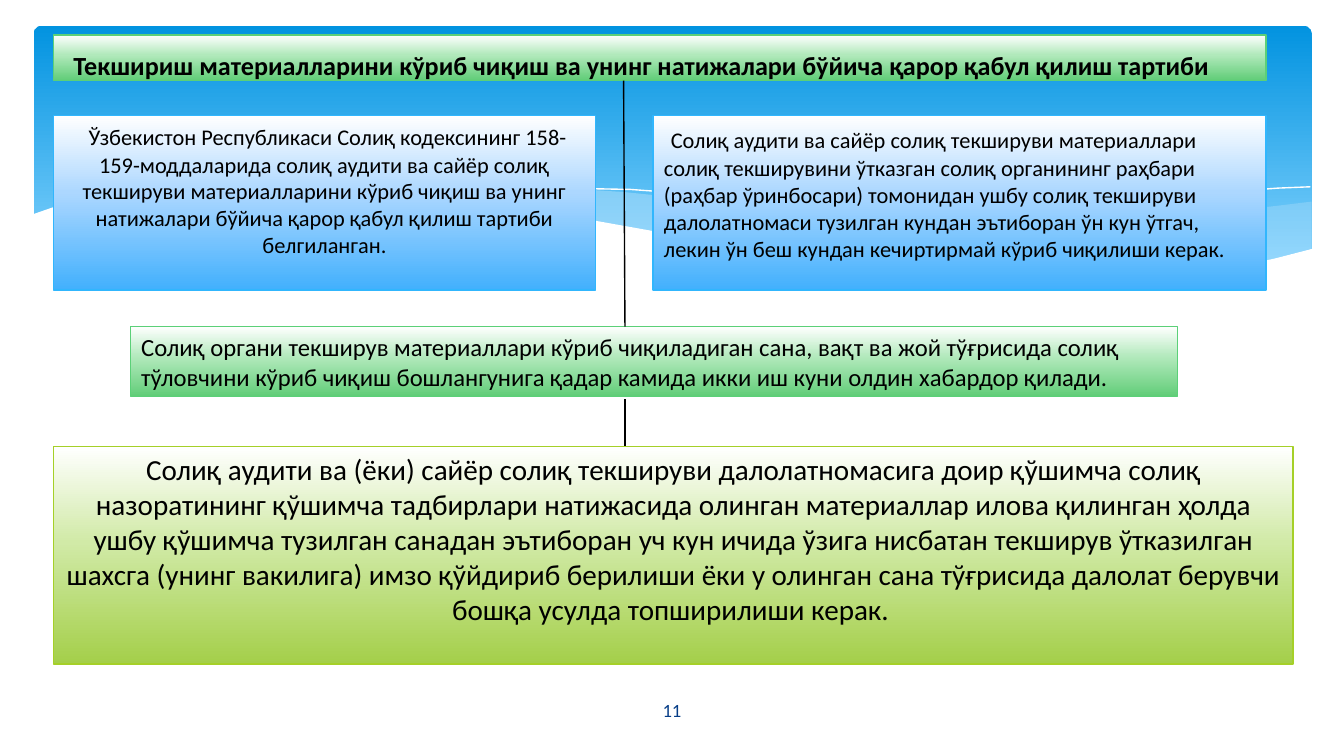
"""Build the slide on reviewing tax audit materials and adopting decisions."""
from lxml.etree import SubElement
from pptx import Presentation
from pptx.dml.color import RGBColor
from pptx.enum.shapes import MSO_CONNECTOR as Connector, MSO_SHAPE as Preset
from pptx.enum.text import MSO_ANCHOR as Anchor, PP_ALIGN as Align
from pptx.oxml.ns import qn
from pptx.util import Inches, Pt

BLACK = RGBColor(0x00, 0x00, 0x00)
WHITE = RGBColor(0xFF, 0xFF, 0xFF)
NAVY = RGBColor(0x07, 0x3E, 0x87)
PALE_BLUE = RGBColor(0xC6, 0xE7, 0xFC)
SKY_TOP, SKY_BOTTOM = RGBColor(0x02, 0x93, 0xE0), RGBColor(0x83, 0xD3, 0xFE)
BLUE_MIDDLE, BLUE_END = RGBColor(0xAC, 0xD7, 0xFF), RGBColor(0x42, 0xB0, 0xFD)
GREEN_MIDDLE, GREEN_END = RGBColor(0xB1, 0xE9, 0xBB), RGBColor(0x61, 0xCD, 0x78)
LIME_MIDDLE, LIME_END = RGBColor(0xD1, 0xEA, 0xA7), RGBColor(0xA4, 0xCF, 0x4A)
BLUE_EDGE = RGBColor(0x31, 0xB6, 0xFD)
GREEN_EDGE = RGBColor(0x5B, 0xD0, 0x78)
LIME_EDGE = RGBColor(0xA5, 0xD0, 0x28)

SKY = [(0, SKY_TOP), (90, SKY_BOTTOM)]
BLUE = {"stops": [(0, WHITE), (44, BLUE_MIDDLE), (100, BLUE_END)], "edge": BLUE_EDGE}
GREEN = {"stops": [(0, WHITE), (44, GREEN_MIDDLE), (100, GREEN_END)], "edge": GREEN_EDGE}
LIME = {"stops": [(0, WHITE), (44, LIME_MIDDLE), (100, LIME_END)], "edge": LIME_EDGE}

NARROW_INSETS = (0.08, 0.04, 0.07, 0.04)
BOXES = [
    {"at": (0.4, 0.86, 4.03, 1.3), "theme": BLUE, "size": 12, "lead": 14,
     "align": Align.CENTER, "anchor": Anchor.MIDDLE, "insets": (0.1, 0.05, 0.1, 0.26),
     "text": "Ўзбекистон Республикаси Солиқ кодексининг 158-159-моддаларида солиқ аудити ва "
             "сайёр солиқ текшируви материалларини кўриб чиқиш ва унинг натижалари бўйича "
             "қарор қабул қилиш тартиби белгиланган."},
    {"at": (0.4, 0.26, 9.02, 0.34), "theme": GREEN, "size": 14, "lead": 18.9, "bold": True,
     "text": "Текшириш материалларини кўриб чиқиш ва унинг натижалари бўйича қарор қабул "
             "қилиш тартиби"},
    {"at": (0.97, 2.43, 7.79, 0.52), "theme": GREEN, "size": 13.2,
     "text": "Солиқ органи текширув материаллари кўриб чиқиладиган сана, вақт ва жой "
             "тўғрисида солиқ тўловчини кўриб чиқиш бошлангунига қадар камида икки иш куни "
             "олдин хабардор қилади."},
    {"at": (4.86, 0.86, 4.56, 1.3), "theme": BLUE, "size": 12, "lead": 15,
     "insets": (0.08, 0.04, 0.12, 0.04),
     "text": "Солиқ аудити ва сайёр солиқ текшируви материаллари солиқ текширувини ўтказган "
             "солиқ органининг раҳбари (раҳбар ўринбосари) томонидан ушбу солиқ текшируви "
             "далолатномаси тузилган кундан эътиборан ўн кун ўтгач, лекин ўн беш кундан "
             "кечиртирмай кўриб чиқилиши керак."},
    {"at": (0.4, 3.32, 9.22, 1.62), "theme": LIME, "size": 15.6, "align": Align.CENTER,
     "text": "Солиқ аудити ва (ёки) сайёр солиқ текшируви далолатномасига доир қўшимча солиқ "
             "назоратининг қўшимча тадбирлари натижасида олинган материаллар илова қилинган "
             "ҳолда ушбу қўшимча тузилган санадан эътиборан уч кун ичида ўзига нисбатан "
             "текширув ўтказилган шахсга (унинг вакилига) имзо қўйдириб берилиши ёки у "
             "олинган сана тўғрисида далолат берувчи бошқа усулда топширилиши керак. "},
]
PAGE_NUMBER = {"at": (4.36, 5.13, 1.27, 0.3), "size": 10, "text": "11", "color": NAVY,
               "align": Align.CENTER, "anchor": Anchor.MIDDLE}
CONNECTORS = [((4.64, 0.6), (4.65, 2.43)), ((4.65, 2.97), (4.65, 3.32))]

WAVES = [
    {"fill": PALE_BLUE, "alpha": 29, "points": [
        (9.76, 1.5), (9.35, 1.55), (8.61, 1.67), (7.79, 1.82), (7.06, 1.93), (6.61, 1.99),
        (7.05, 2.03), (7.57, 2.07), (8.14, 2.08), (8.63, 2.06), (9.05, 2.02), (9.42, 1.94),
        (9.76, 1.85)]},
    {"fill": PALE_BLUE, "alpha": 40, "points": [
        (8.93, 2.04), (8.37, 1.99), (7.75, 1.91), (7.06, 1.8), (6.29, 1.66), (5.69, 1.56),
        (5.14, 1.48), (4.65, 1.43), (4.2, 1.4), (3.61, 1.39), (3.13, 1.41), (2.86, 1.44),
        (3.42, 1.49), (4.04, 1.58), (4.91, 1.74), (5.66, 1.86), (6.34, 1.96), (6.95, 2.03),
        (7.48, 2.07), (8.07, 2.09), (8.57, 2.08)]},
    {"line": WHITE, "points": [
        (3.09, 1.47), (3.28, 1.44), (3.63, 1.41), (4.16, 1.4), (4.69, 1.41), (5.1, 1.44),
        (5.56, 1.47), (6.08, 1.53), (6.65, 1.6), (7.27, 1.69), (7.95, 1.81), (9.07, 2.04)]},
    {"line": WHITE, "points": [
        (6.13, 1.92), (6.53, 1.85), (6.95, 1.77), (7.76, 1.62), (8.36, 1.53), (8.81, 1.47),
        (9.24, 1.42), (9.51, 1.4), (9.75, 1.39)]},
    {"fill": WHITE, "points": [
        (9.77, 1.85), (9.5, 1.92), (9.2, 1.99), (8.87, 2.03), (8.5, 2.06), (8.09, 2.07),
        (7.61, 2.06), (7.08, 2.03), (6.48, 1.96), (5.79, 1.87), (5.03, 1.75), (4.47, 1.65),
        (3.91, 1.55), (3.4, 1.48), (2.92, 1.43), (2.5, 1.4), (1.93, 1.38), (1.46, 1.39),
        (1.06, 1.42), (0.76, 1.46), (0.46, 1.52), (0.23, 1.6), (0.23, 2.47), (9.77, 2.47)]},
]


def inches(values):
    return [Inches(value) for value in values]


def set_gradient(shape, stops):
    shape.fill.gradient()
    shape.fill.gradient_angle = 270
    stop_list = shape._element.spPr.find(qn("a:gradFill")).find(qn("a:gsLst"))
    for stop in list(stop_list):
        stop_list.remove(stop)
    for position, color in stops:
        stop = SubElement(stop_list, qn("a:gs"), pos=str(position * 1000))
        SubElement(stop, qn("a:srgbClr"), val=str(color))


def add_wave(slide, wave):
    points = [inches(point) for point in wave["points"]]
    builder = slide.shapes.build_freeform(*points[0])
    builder.add_line_segments(points[1:], close="fill" in wave)
    shape = builder.convert_to_shape()
    shape.shadow.inherit = False
    if "line" in wave:
        shape.fill.background()
        shape.line.color.rgb = wave["line"]
        shape.line.width = Pt(0)
        return
    shape.line.fill.background()
    shape.fill.solid()
    shape.fill.fore_color.rgb = wave["fill"]
    if "alpha" in wave:
        color = shape._element.spPr.find(qn("a:solidFill"))[0]
        SubElement(color, qn("a:alpha"), val=str(wave["alpha"] * 1000))


def write_text(shape, item):
    frame = shape.text_frame
    left, top, right, bottom = inches(item.get("insets", NARROW_INSETS))
    layout = {"word_wrap": True, "vertical_anchor": item.get("anchor", Anchor.TOP),
              "margin_left": left, "margin_top": top,
              "margin_right": right, "margin_bottom": bottom}
    for name, value in layout.items():
        setattr(frame, name, value)
    paragraph = frame.paragraphs[0]
    paragraph.alignment = item.get("align", Align.LEFT)
    runs = [(item["text"], "Calibri", item["size"])]
    if "lead" in item:
        runs.insert(0, (" ", "Times New Roman", item["lead"]))
    for text, font, size in runs:
        run = paragraph.add_run()
        run.text = text
        run.font.color.rgb = item.get("color", BLACK)
        style = {"name": font, "size": Pt(size), "bold": item.get("bold", False)}
        for name, value in style.items():
            setattr(run.font, name, value)


def add_box(slide, box):
    shape = slide.shapes.add_shape(Preset.RECTANGLE, *inches(box["at"]))
    shape.shadow.inherit = False
    set_gradient(shape, box["theme"]["stops"])
    shape.line.color.rgb = box["theme"]["edge"]
    shape.line.width = Pt(0.75)
    write_text(shape, box)


def add_connector(slide, start, end):
    line = slide.shapes.add_connector(Connector.STRAIGHT, *inches(start + end))
    line.line.color.rgb = BLACK
    line.line.width = Pt(0.75)
    SubElement(line._element.spPr, qn("a:effectLst"))


def main():
    presentation = Presentation()
    presentation.slide_width = Inches(10)
    presentation.slide_height = Inches(10 * 9 / 16)
    slide = presentation.slides.add_slide(presentation.slide_layouts[6])
    sky = slide.shapes.add_shape(Preset.ROUNDED_RECTANGLE, *inches((0.25, 0.19, 9.51, 2.02)))
    sky.adjustments[0] = 0.03
    sky.shadow.inherit = False
    sky.line.fill.background()
    set_gradient(sky, SKY)
    for wave in WAVES:
        add_wave(slide, wave)
    for box in BOXES:
        add_box(slide, box)
    for start, end in CONNECTORS:
        add_connector(slide, start, end)
    write_text(slide.shapes.add_textbox(*inches(PAGE_NUMBER["at"])), PAGE_NUMBER)
    presentation.save("out.pptx")


if __name__ == "__main__":
    main()
